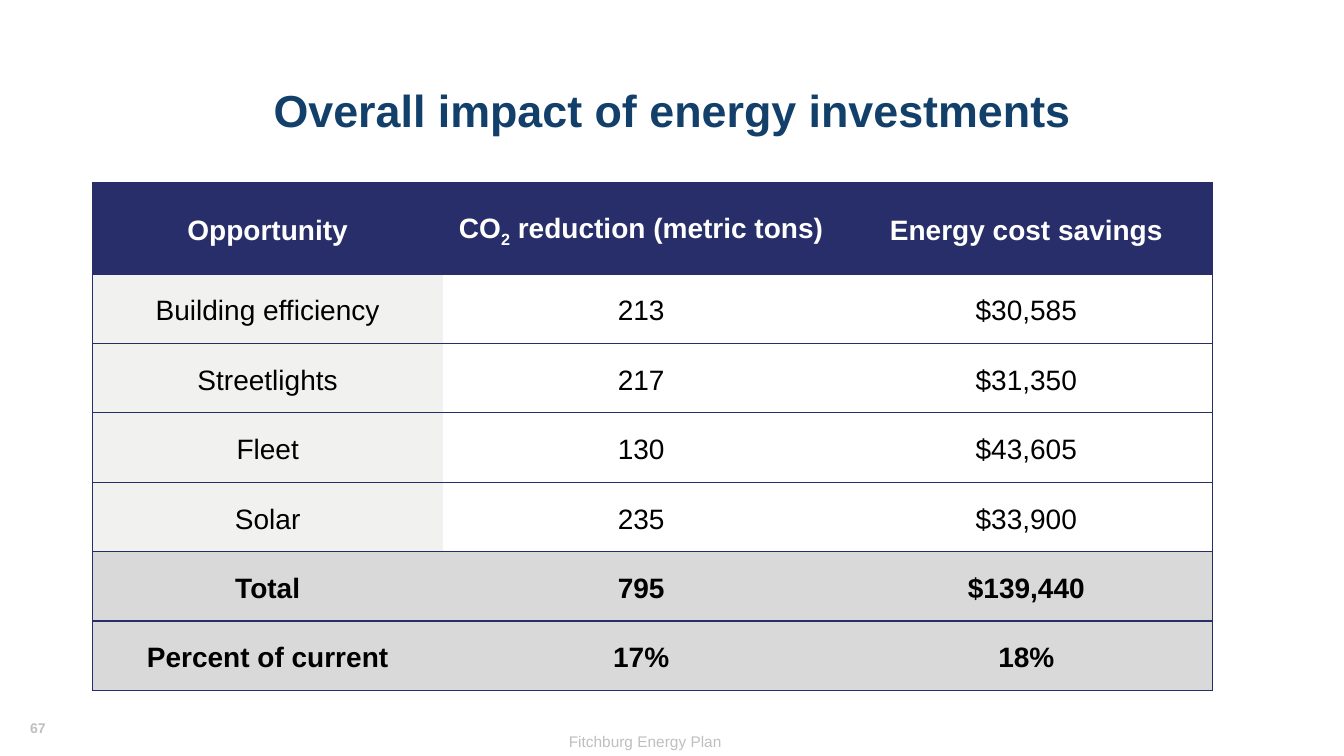
import pptx
import pptx.dml.color
import pptx.enum.text
import pptx.oxml
import pptx.oxml.ns
import pptx.util
from lxml import etree

RGBColor = pptx.dml.color.RGBColor
Inches = pptx.util.Inches
Pt = pptx.util.Pt
qn = pptx.oxml.ns.qn
CENTER = pptx.enum.text.PP_ALIGN.CENTER
LEFT = pptx.enum.text.PP_ALIGN.LEFT
MIDDLE = pptx.enum.text.MSO_ANCHOR.MIDDLE
TOP = pptx.enum.text.MSO_ANCHOR.TOP

NAVY = RGBColor(0x27, 0x2E, 0x69)
TITLE_BLUE = RGBColor(0x13, 0x40, 0x6A)
LABEL_GREY = RGBColor(0xF1, 0xF1, 0xF0)
TOTAL_GREY = RGBColor(0xD9, 0xD9, 0xD9)
FOOTER_GREY = RGBColor(0xBF, 0xBF, 0xBF)
WHITE = RGBColor(0xFF, 0xFF, 0xFF)
BLACK = RGBColor(0, 0, 0)

FONT = "Arial"
NO_STYLE = "{2D5ABB26-0587-4C30-8999-92F81FD0307C}"
COLS = [3.47, 3.94, 3.7]
HEADER_HEIGHT = 0.91
ROWS = [
    ["Opportunity", ["CO", "2", " reduction (metric tons)"], "Energy cost savings"],
    ["Building efficiency", "213", "$30,585"],
    ["Streetlights", "217", "$31,350"],
    ["Fleet", "130", "$43,605"],
    ["Solar", "235", "$33,900"],
    ["Total", "795", "$139,440"],
    ["Percent of current", "17%", "18%"],
]
TOTAL_ROWS = 2


def style_paragraph(p, size, color, bold, align, spacing=1.0):
    p.alignment = align
    p.line_spacing = spacing
    p.font.name = FONT
    p.font.size = Pt(size)
    p.font.bold = bold
    p.font.color.rgb = color


def add_text(s, box, text, size, color, bold=False, align=CENTER,
             anchor=TOP, wrap=True, spacing=1.0):
    sp = s.shapes.add_textbox(*map(Inches, box))
    tf = sp.text_frame
    tf.word_wrap = wrap
    tf.vertical_anchor = anchor
    p = tf.paragraphs[0]
    p.text = text
    style_paragraph(p, size, color, bold, align, spacing)


def add_title(s, box):
    add_text(s, box, "Overall impact of energy investments", 32, TITLE_BLUE,
             bold=True, anchor=MIDDLE, spacing=0.9)


def add_footer(s, box):
    left, top, width, height = box
    add_text(s, (left, top, 0.37, 0.27), "67", 10, FOOTER_GREY,
             bold=True, align=LEFT, wrap=False)
    add_text(s, (left + 4.15, top + 0.12, width, height),
             "Fitchburg Energy Plan", 11, FOOTER_GREY)


def add_borders(cell, sides):
    tcPr = cell._tc.get_or_add_tcPr()
    for side in sides:
        ln = etree.SubElement(tcPr, qn(f"a:ln{side}"), w=str(Pt(1)))
        fill = etree.SubElement(ln, qn("a:solidFill"))
        etree.SubElement(fill, qn("a:srgbClr"), val=str(NAVY))


def fill_cell(cell, content, fill, color, bold):
    cell.vertical_anchor = MIDDLE
    cell.margin_left = cell.margin_right = Inches(0.07)
    cell.margin_top = cell.margin_bottom = 0
    if fill is None:
        cell.fill.background()
    else:
        cell.fill.solid()
        cell.fill.fore_color.rgb = fill
    p = cell.text_frame.paragraphs[0]
    if isinstance(content, str):
        p.text = content
    else:
        # The middle part is a subscript
        for i, part in enumerate(content):
            r = p.add_run()
            r.text = part
            if i == 1:
                r._r.get_or_add_rPr().set("baseline", "-25000")
    style_paragraph(p, 20, color, bold, CENTER, 1.15)


def add_impact_table(s, box):
    frame = s.shapes.add_table(len(ROWS), len(COLS), *map(Inches, box))
    for style in frame.element.iter(qn("a:tableStyleId")):
        style.text = NO_STYLE
    table = frame.table
    table.first_row = table.horz_banding = False

    # Grid
    for column, width in zip(table.columns, COLS):
        column.width = Inches(width)
    row_height = (box[3] - HEADER_HEIGHT) / (len(ROWS) - 1)
    for y, row in enumerate(table.rows):
        row.height = Inches(row_height if y else HEADER_HEIGHT)

    # Cells: header, opportunities, totals
    for y, values in enumerate(ROWS):
        header, total = y == 0, y >= len(ROWS) - TOTAL_ROWS
        for x, content in enumerate(values):
            cell = table.cell(y, x)
            left = "L" if x == 0 else ""
            right = "R" if x == len(COLS) - 1 else ""
            add_borders(cell, left + right + "TB")
            if header:
                fill = NAVY
            elif total:
                fill = TOTAL_GREY
            else:
                fill = LABEL_GREY if x == 0 else None
            fill_cell(cell, content, fill, WHITE if header else BLACK, header or total)


def main():
    prs = pptx.Presentation()
    prs.slide_width, prs.slide_height = Inches(13.33), Inches(7.5)
    s = prs.slides.add_slide(prs.slide_layouts[6])
    add_footer(s, (0.2, 7.09, 4.1, 0.29))
    add_title(s, (0.92, 0.4, 11.5, 1.45))
    add_impact_table(s, (0.92, 1.81, sum(COLS), 5.04))
    prs.save("out.pptx")


if __name__ == "__main__":
    main()
